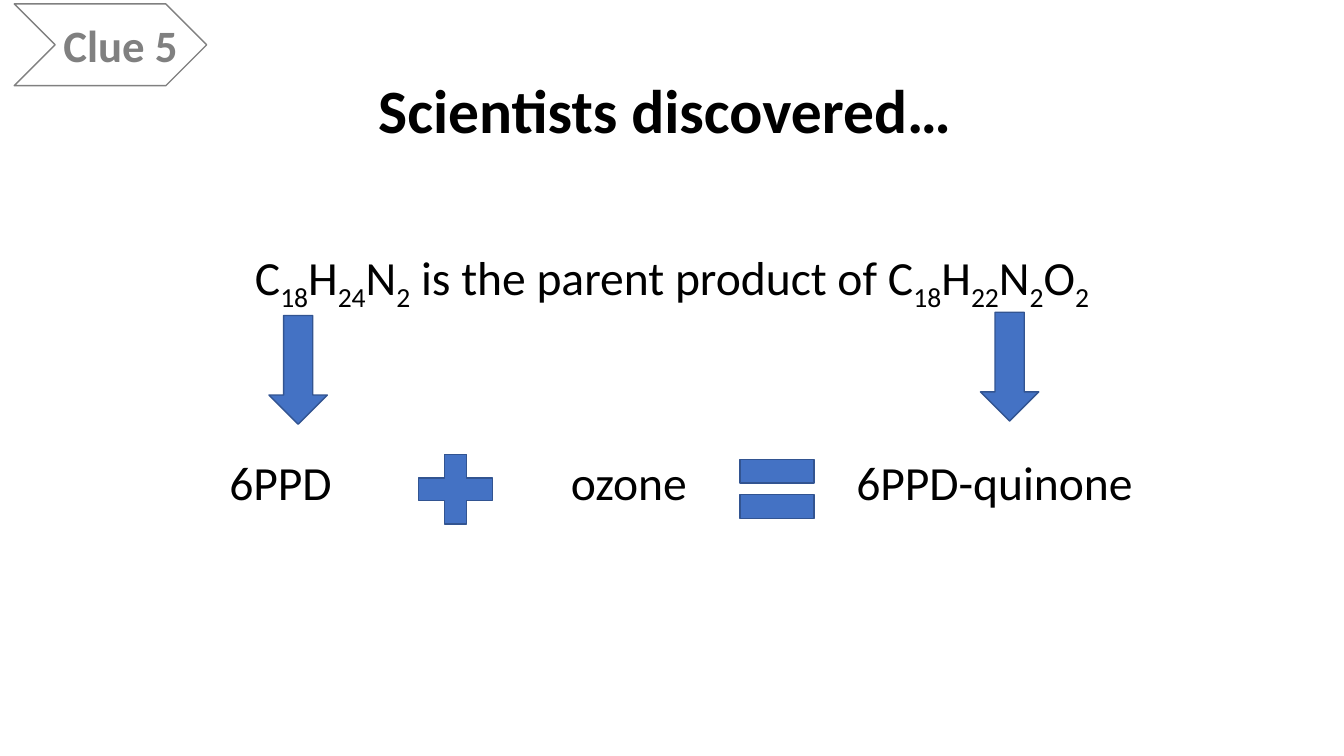
import lxml.etree
import pptx
import pptx.dml.color
import pptx.enum.shapes
import pptx.enum.text
import pptx.oxml.ns
import pptx.util

Cm = pptx.util.Cm
Pt = pptx.util.Pt
SHAPE = pptx.enum.shapes.MSO_SHAPE
ALIGN = pptx.enum.text.PP_ALIGN
ANCHOR = pptx.enum.text.MSO_ANCHOR


class ClueSlide:
    FONT = "Calibri"
    COLORS = {"ink": "000000", "grey": "808080", "blue": "4472C4", "edge": "325491"}

    def __init__(self, slide):
        self.slide = slide
        self.canvas = slide.shapes

    def color(self, name):
        return pptx.dml.color.RGBColor.from_string(self.COLORS[name])

    def group(self):
        """Send the following elements into a new group."""
        self.canvas = self.slide.shapes.add_group_shape().shapes

    def text(self, words, left, top, width, height, size, color="ink", bold=False,
             align=ALIGN.CENTER, anchor=ANCHOR.TOP, spacing=0.9, before=0):
        """Add a text box; every second part between bars is a subscript."""
        box = self.canvas.add_textbox(Cm(left), Cm(top), Cm(width), Cm(height))
        frame = box.text_frame
        frame.word_wrap = True
        frame.vertical_anchor = anchor
        paragraph = frame.paragraphs[0]
        paragraph.alignment = align
        paragraph.line_spacing = spacing
        paragraph.space_before = Pt(before)
        for index, part in enumerate(words.split("|")):
            run = paragraph.add_run()
            run.text = part
            run.font.name = self.FONT
            run.font.size = Pt(size)
            run.font.bold = bold
            run.font.color.rgb = self.color(color)
            if index % 2:
                run._r.get_or_add_rPr().set("baseline", "-25000")
        return frame

    def columns(self, words, inset, stops, *box, **style):
        """Add one line whose words start at the inset and at the tab stops."""
        frame = self.text("\t".join(words), *box, align=ALIGN.LEFT, **style)
        frame.margin_left = Cm(inset)
        properties = frame.paragraphs[0]._p.get_or_add_pPr()
        qn = pptx.oxml.ns.qn
        tabs = lxml.etree.SubElement(properties, qn("a:tabLst"))
        for stop in stops:
            lxml.etree.SubElement(tabs, qn("a:tab"), pos=str(Cm(stop)), algn="l")

    def shape(self, kind, left, top, width, height, fill="blue", line="edge"):
        shape = self.canvas.add_shape(kind, Cm(left), Cm(top), Cm(width), Cm(height))
        shape.shadow.inherit = False
        if fill:
            shape.fill.solid()
            shape.fill.fore_color.rgb = self.color(fill)
        else:
            shape.fill.background()
        shape.line.color.rgb = self.color(line)
        shape.line.width = Pt(1)


def main():
    deck = pptx.Presentation()
    deck.slide_width, deck.slide_height = Cm(33.87), Cm(19.05)
    clue = ClueSlide(deck.slides.add_slide(deck.slide_layouts[6]))

    left, width = 2.33, 29.21
    clue.text("Scientists discovered… ", left, 1.01, width, 3.68, 44,
              bold=True, anchor=ANCHOR.MIDDLE)
    clue.text("C|18|H|24|N|2| is the parent product of C|18|H|22|N|2|O|2",
              left, 6.15, width, 1.73, 34, before=10)
    for arrow_left, arrow_top in ((24.71, 7.87), (6.78, 7.95)):
        clue.shape(SHAPE.DOWN_ARROW, arrow_left, arrow_top, 1.47, 2.74)

    clue.columns(["6PPD", "ozone", "6PPD-quinone"], 3.45, [8.61, 15.8],
                 left, 11.46, width, 1.73, 34, before=10)
    clue.shape(SHAPE.MATH_PLUS, 10.21, 11.13, 2.54, 2.39)
    clue.shape(SHAPE.MATH_EQUAL, 18.31, 11.05, 2.54, 2.54)

    clue.group()
    clue.text("Clue 5", 1.35, 0.33, 4.19, 1.63, 32, color="grey", bold=True,
              align=ALIGN.LEFT, spacing=1.0)
    clue.shape(SHAPE.CHEVRON, 0.36, 0.1, 4.85, 2.06, fill=None, line="grey")

    deck.save("out.pptx")


if __name__ == "__main__":
    main()
